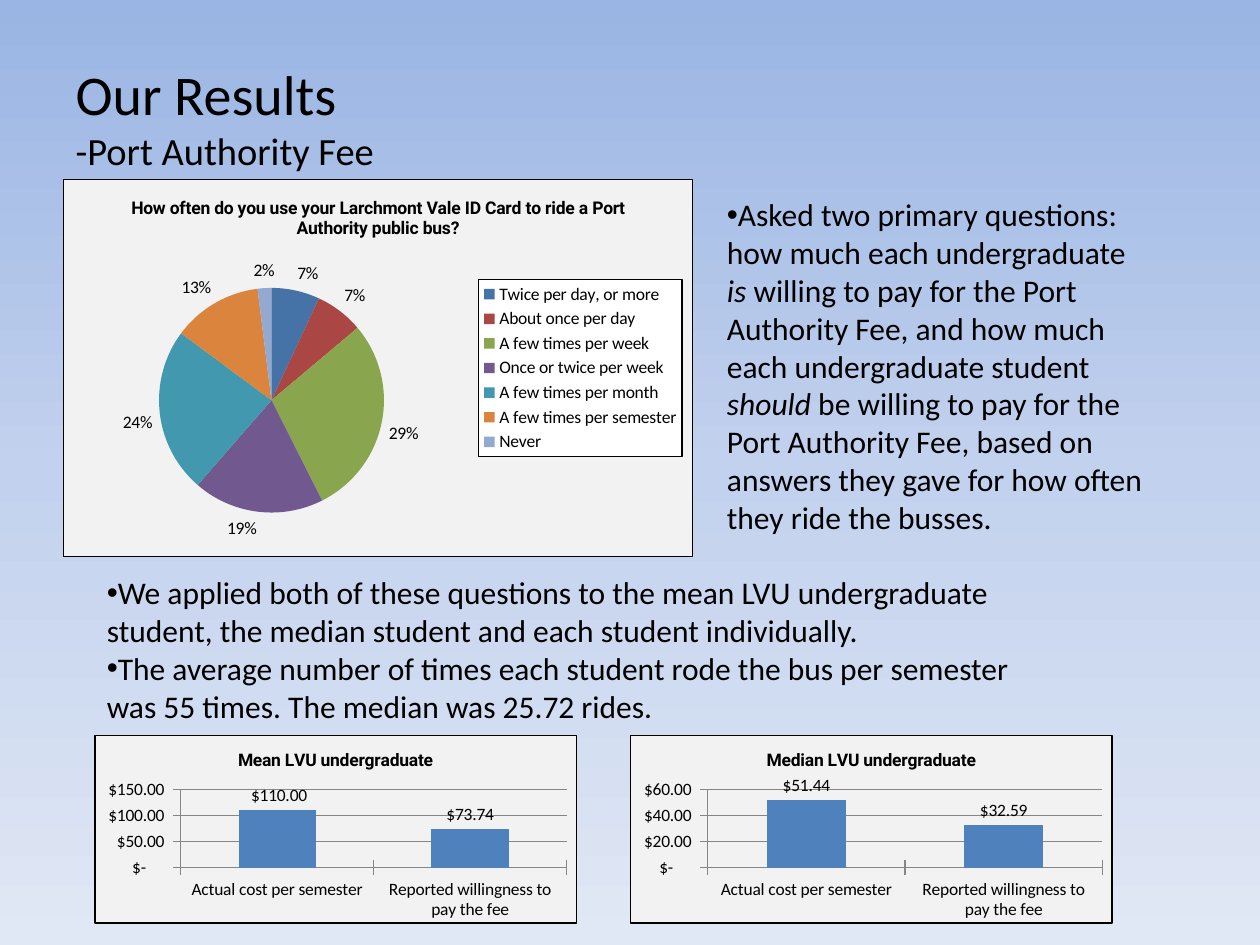
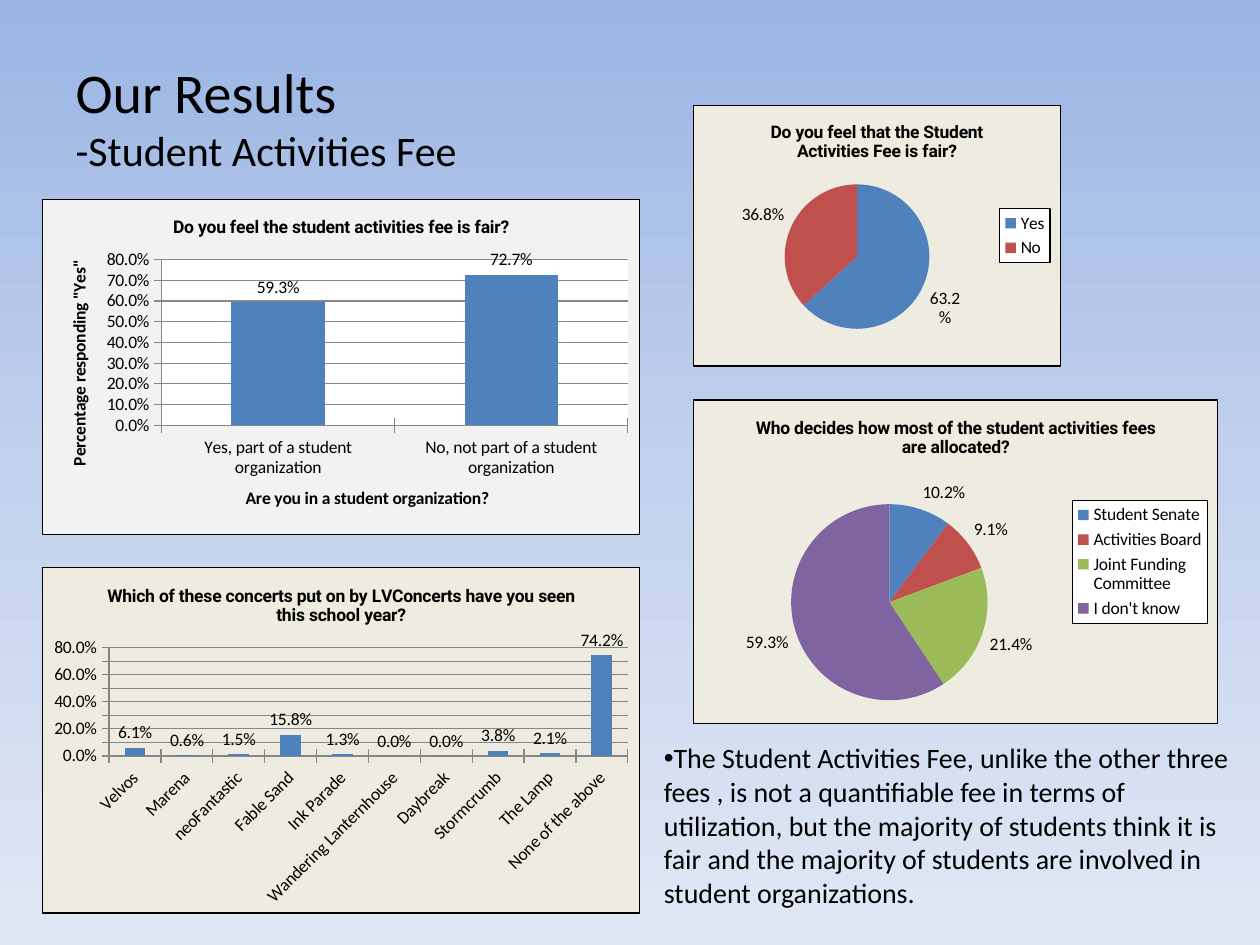
from copy import deepcopy

from lxml import etree
from pptx import Presentation
from pptx import util as u
from pptx.chart.data import CategoryChartData
from pptx.dml.color import RGBColor
from pptx.enum import chart as ch, text
from pptx.oxml import ns, parse_xml

Cm, Pt = u.Cm, u.Pt

COLORS = {
    "black": "000000", "white": "FFFFFF", "axis": "868686",
    "sky_top": "9AB5E4", "sky_mid": "C2D1ED", "sky_low": "E1E8F5",
    "grey": "F2F2F2", "cream": "EEECE1", "bar": "4F81BD",
}
BRIGHT = ["4F81BD", "C0504D", "9BBB59", "8064A2"]
MUTED = ["4572A7", "AA4643", "89A54E", "71588F", "4198AF", "DB843D", "93A9CF"]
DOLLARS = '_("$"* #,##0.00_);_("$"* \\(#,##0.00\\);_("$"* "-"??_);_(@_)'
PERCENT = "0.0%"


def rgb(name):
    return RGBColor.from_string(COLORS[name])


def box_format(fill=None, border=True):
    """Fill and outline for a part of a chart."""
    inner = (f'<a:solidFill><a:srgbClr val="{COLORS[fill]}"/></a:solidFill>'
             if fill else "<a:noFill/>")
    line = (f'<a:ln w="{Pt(0.75)}"><a:solidFill><a:srgbClr val="{COLORS["black"]}"/>'
            "</a:solidFill></a:ln>" if border else "<a:ln><a:noFill/></a:ln>")
    return parse_xml(f'<c:spPr {ns.nsdecls("c", "a")}>{inner}{line}</c:spPr>')


class Deck:
    """Shared style and the slide being built."""
    font, title_font, chart_size = "Calibri", "Roboto", 10

    def __init__(self):
        self.prs = Presentation()
        self.prs.slide_width, self.prs.slide_height = Cm(25.4), Cm(19.05)
        self.s = None
        self.background()

    def background(self):
        master = self.prs.slide_master
        fill = master.background.fill
        fill.gradient()
        fill.gradient_angle = 270
        stops = master.element.find(".//" + ns.qn("a:gsLst"))
        stops.insert(1, deepcopy(stops[0]))
        for stop, (name, place) in zip(fill.gradient_stops, [
                ("sky_top", 0), ("sky_mid", 0.5), ("sky_low", 1)]):
            stop.color.rgb = rgb(name)
            stop.position = place

    def slide(self, layout, subtitle, size):
        self.s = self.prs.slides.add_slide(self.prs.slide_layouts[layout])
        sp = self.s.shapes.title
        self.place(sp, 1.27, 0.76, 22.86, 3.18)
        tf = sp.text_frame
        tf.vertical_anchor = text.MSO_ANCHOR.MIDDLE
        p = tf.paragraphs[0]
        p.alignment = text.PP_ALIGN.LEFT
        self.style(p.font, 32)
        p.add_run().text = "Our Results"
        p.add_line_break()
        r = p.add_run()
        r.text = subtitle
        r.font.size = Pt(size)

    def place(self, sp, left, top, width, height):
        sp.left, sp.top, sp.width, sp.height = map(Cm, (left, top, width, height))

    def style(self, font, size, name=None, bold=None):
        font.name, font.size, font.bold = name or self.font, Pt(size), bold
        font.color.rgb = rgb("black")

    def bullets(self, idx, box, size, items):
        """Fill a body placeholder; every second part of an item is italic."""
        sp = self.s.placeholders[idx]
        self.place(sp, *box)
        tf = sp.text_frame
        tf.word_wrap = True
        tf.auto_size = text.MSO_AUTO_SIZE.SHAPE_TO_FIT_TEXT
        for i, parts in enumerate(items):
            p = tf.add_paragraph() if i else tf.paragraphs[0]
            p.space_before = Pt(0)
            self.style(p.font, size)
            pPr = p._p.get_or_add_pPr()
            pPr.set("marL", "0")
            pPr.set("indent", "0")
            bullet = etree.Element(ns.qn("a:buChar"), char="•")
            pPr.find(ns.qn("a:defRPr")).addprevious(bullet)
            for j, part in enumerate(parts):
                r = p.add_run()
                r.text = part
                if j % 2:
                    r.font.italic = True

    def chart(self, kind, box, title, cats, vals, fmt, fill, plot_fill=None):
        data = CategoryChartData(number_format=fmt)
        data.categories = cats
        data.add_series("Series 1", vals)
        chart = self.s.shapes.add_chart(kind, *map(Cm, box), data).chart
        self.style(chart.font, self.chart_size)
        self.heading(chart, title, self.title_font)
        space = chart._chartSpace
        space.chart.addnext(box_format(fill))
        space.chart.plotArea.append(box_format(plot_fill, border=False))
        plot = chart.plots[0]
        plot.has_data_labels = True
        labels = plot.data_labels
        labels.number_format, labels.number_format_is_linked = fmt, False
        labels.show_value, labels.show_percentage = True, False
        labels.position = ch.XL_LABEL_POSITION.OUTSIDE_END
        return chart

    def heading(self, owner, words, name=None):
        """Title of a chart or of an axis."""
        title = owner.chart_title if hasattr(owner, "chart_title") else owner.axis_title
        p = title.text_frame.paragraphs[0]
        p.add_run().text = words
        self.style(p.font, self.chart_size, name, True)
        self.style(p.runs[0].font, self.chart_size, name, True)

    def pie(self, box, title, cats, vals, fmt, fill, palette):
        chart = self.chart(ch.XL_CHART_TYPE.PIE, box, title, cats, vals, fmt, fill)
        chart.has_legend = True
        chart.legend.position = ch.XL_LEGEND_POSITION.RIGHT
        chart.legend.include_in_layout = False
        chart.legend._element.append(box_format("white"))
        points = chart.plots[0].series[0].points
        for i, color in enumerate(palette[:len(cats)]):
            slice_fill = points[i].format.fill
            slice_fill.solid()
            slice_fill.fore_color.rgb = RGBColor.from_string(color)

    def columns(self, box, title, cats, vals, fmt, fill, top, step,
                plot_fill=None, axis_titles=()):
        chart = self.chart(ch.XL_CHART_TYPE.COLUMN_CLUSTERED, box, title, cats,
                           vals, fmt, fill, plot_fill)
        chart.has_legend = False
        plot = chart.plots[0]
        plot.gap_width, plot.vary_by_categories = 150, False
        bar_fill = plot.series[0].format.fill
        bar_fill.solid()
        bar_fill.fore_color.rgb = rgb("bar")
        axes = chart.category_axis, chart.value_axis
        for axis in axes:
            axis.major_tick_mark = ch.XL_TICK_MARK.CROSS
            axis.minor_tick_mark = ch.XL_TICK_MARK.NONE
            axis.format.line.color.rgb = rgb("axis")
        for axis, words in zip(axes, axis_titles):
            self.heading(axis, words)
        value = chart.value_axis
        value.minimum_scale, value.maximum_scale, value.major_unit = 0, top, step
        value.tick_labels.number_format = fmt
        value.tick_labels.number_format_is_linked = False
        value.has_major_gridlines = True
        value.major_gridlines.format.line.color.rgb = rgb("axis")


def port_authority(deck):
    deck.slide(3, "-Port Authority Fee", 22)
    deck.pie(
        (1.27, 3.61, 12.7, 7.62),
        "How often do you use your Larchmont Vale ID Card to ride a Port Authority public bus?",
        ["Twice per day, or more", "About once per day", "A few times per week",
         "Once or twice per week", "A few times per month",
         "A few times per semester", "Never"],
        [0.07, 0.07, 0.29, 0.19, 0.24, 0.13, 0.02], "0%", "grey", MUTED)

    # Survey questions and findings
    deck.bullets(1, (14.4, 3.81, 8.89, 7.19), 18, [[
        "Asked two primary questions: how much each undergraduate ", "is",
        " willing to pay for the Port Authority Fee, and how much each "
        "undergraduate student ", "should",
        " be willing to pay for the Port Authority Fee, based on answers they "
        "gave for how often they ride the busses."]])
    deck.bullets(2, (1.9, 11.43, 19.69, 3.33), 18, [
        ["We applied both of these questions to the mean LVU undergraduate "
         "student, the median student and each student individually."],
        ["The average number of times each student rode the bus per semester "
         "was 55 times. The median was 25.72 rides."]])

    # Cost against willingness to pay
    cats = ["Actual cost per semester", "Reported willingness to pay the fee"]
    for left, name, vals, top, step in [
            (1.9, "Mean", [110, 73.74], 150, 50),
            (12.7, "Median", [51.44, 32.59], 60, 20)]:
        deck.columns((left, 14.81, 9.73, 3.81), f"{name} LVU undergraduate",
                     cats, vals, DOLLARS, "grey", top, step)


def student_activities(deck):
    deck.slide(1, "-Student Activities Fee", 24)
    deck.bullets(1, (13.13, 14.81, 12.27, 3.68), 16, [[
        "The Student Activities Fee, unlike the other three fees , is not a "
        "quantifiable fee in terms of utilization, but the majority of students "
        "think it is fair and the majority of students are involved in student "
        "organizations."]])

    # Opinions on the fee
    deck.pie((13.97, 2.11, 7.42, 5.28),
             "Do you feel that the Student Activities Fee is fair?",
             ["Yes", "No"], [0.632, 0.368], PERCENT, "cream", BRIGHT)
    deck.pie((13.97, 8.05, 10.59, 6.55),
             "Who decides how most of the student activities fees are allocated?",
             ["Student Senate", "Activities Board", "Joint Funding Committee",
              "I don't know"],
             [0.102, 0.091, 0.214, 0.593], PERCENT, "cream", BRIGHT)

    # Membership and concerts
    deck.columns((0.84, 4.01, 12.07, 6.78),
                 "Do you feel the student activities fee is fair?",
                 ["Yes, part of a student organization",
                  "No, not part of a student organization"],
                 [0.593, 0.727], PERCENT, "grey", 0.8, 0.1, "white",
                 ["Are you in a student organization?",
                  'Percentage responding "Yes"'])
    deck.columns((0.84, 11.43, 12.07, 6.99),
                 "Which of these concerts put on by LVConcerts have you seen this school year?",
                 ["Velvos", "Marena", "neoFantastic", "Fable Sand", "Ink Parade",
                  "Wandering Lanternhouse", "Daybreak", "Stormcrumb", "The Lamp",
                  "None of the above"],
                 [0.061, 0.006, 0.015, 0.158, 0.013, 0, 0, 0.038, 0.021, 0.742],
                 PERCENT, "cream", 0.8, 0.1)


def main():
    deck = Deck()
    port_authority(deck)
    student_activities(deck)
    deck.prs.save("out.pptx")


if __name__ == "__main__":
    main()
